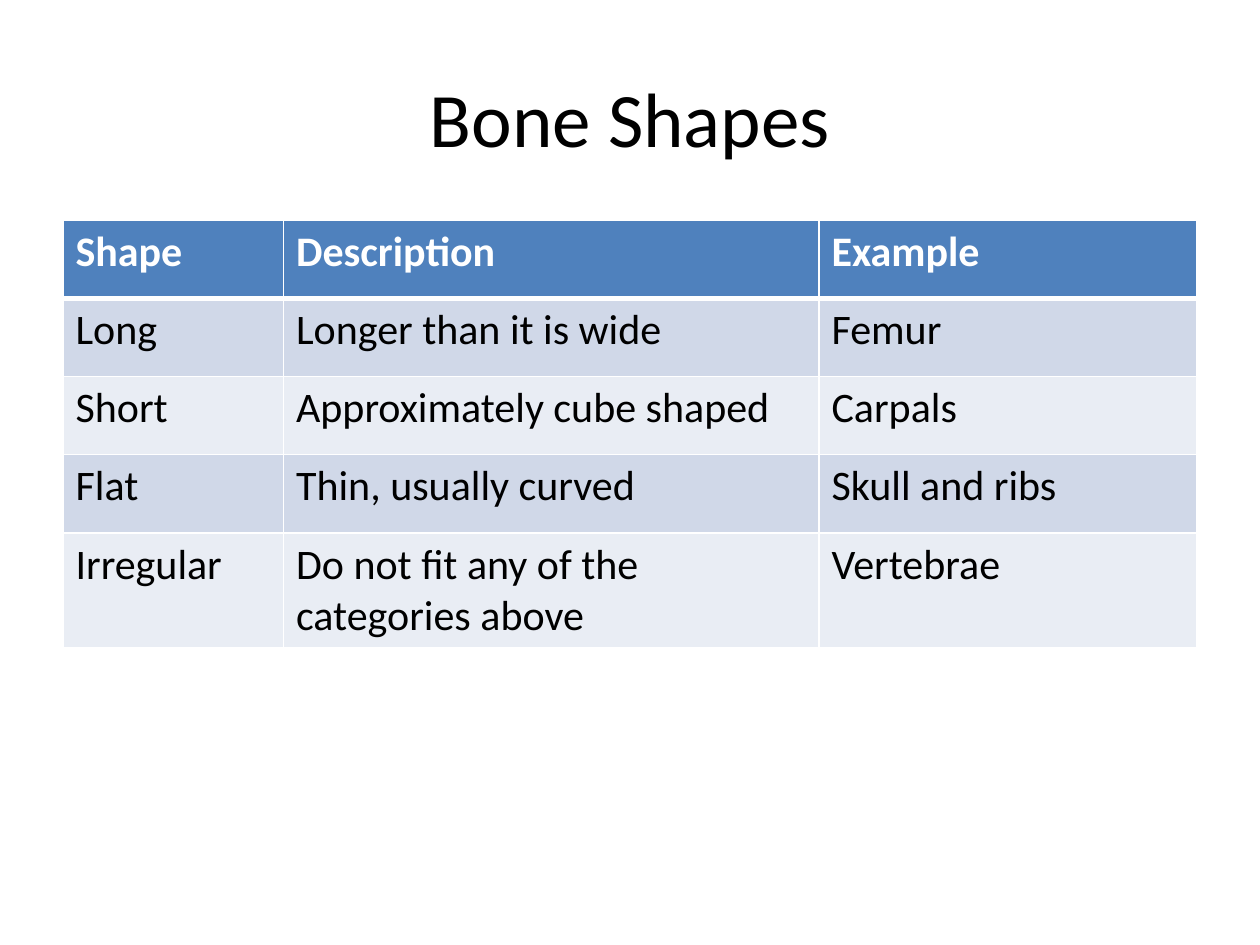
from lxml.etree import SubElement
from pptx import Presentation
from pptx.dml.color import RGBColor
from pptx.enum.text import MSO_ANCHOR, PP_ALIGN
from pptx.oxml.ns import qn
from pptx.util import Inches, Pt

FONT = "Calibri"
WHITE, BLACK = "FFFFFF", "000000"
HEADER_FILL = "4F81BD"
BAND_FILLS = ["D0D8E8", "E9EDF4"]
COLUMN_WIDTHS = [1.75, 4.25, 3]
ROW_HEIGHT = 0.62
BONE_ROWS = [
    ["Shape", "Description", "Example"],
    ["Long", "Longer than it is wide", "Femur"],
    ["Short", "Approximately cube shaped", "Carpals"],
    ["Flat", "Thin, usually curved", "Skull and ribs"],
    ["Irregular", "Do not fit any of the categories above", "Vertebrae"],
]


def color(hex_string):
    return RGBColor.from_string(hex_string)


def write_text(text_frame, text, size=24, text_color=BLACK, bold=False,
               align=PP_ALIGN.LEFT):
    paragraph = text_frame.paragraphs[0]
    paragraph.alignment = align
    run = paragraph.add_run()
    run.text = text
    run.font.name = FONT
    run.font.size = Pt(size)
    run.font.bold = bold
    run.font.color.rgb = color(text_color)


def add_title(slide, text):
    title = slide.shapes.title
    title.left, title.top = Inches(0.5), Inches(0.3)
    title.width, title.height = Inches(9), Inches(1.25)
    title.text_frame.vertical_anchor = MSO_ANCHOR.MIDDLE
    write_text(title.text_frame, text, size=44, align=PP_ALIGN.CENTER)


def set_borders(cell, top=1, bottom=1):
    """Draw white lines around a cell; widths are in points."""
    properties = cell._tc.get_or_add_tcPr()
    for side, width in (("L", 1), ("R", 1), ("T", top), ("B", bottom)):
        line = SubElement(properties, qn(f"a:ln{side}"), w=str(Pt(width)))
        fill = SubElement(line, qn("a:solidFill"))
        SubElement(fill, qn("a:srgbClr"), val=WHITE)


def add_bone_table(slide, rows):
    table = slide.shapes.add_table(
        len(rows), len(COLUMN_WIDTHS), Inches(0.5), Inches(1.75),
        Inches(sum(COLUMN_WIDTHS)), Inches(ROW_HEIGHT * len(rows))).table
    for column, width in zip(table.columns, COLUMN_WIDTHS):
        column.width = Inches(width)

    for row_index, labels in enumerate(rows):
        table.rows[row_index].height = Inches(ROW_HEIGHT)
        is_header = row_index == 0
        fill = HEADER_FILL if is_header else BAND_FILLS[(row_index - 1) % 2]
        for column_index, label in enumerate(labels):
            cell = table.cell(row_index, column_index)
            # The line under the header is thicker than the rest
            set_borders(cell, top=3 if row_index == 1 else 1,
                        bottom=3 if is_header else 1)
            cell.fill.solid()
            cell.fill.fore_color.rgb = color(fill)
            write_text(cell.text_frame, label, bold=is_header,
                       text_color=WHITE if is_header else BLACK)


def main():
    presentation = Presentation()
    presentation.slide_width = Inches(10)
    presentation.slide_height = Inches(7.5)
    slide = presentation.slides.add_slide(presentation.slide_layouts[5])
    add_title(slide, "Bone Shapes")
    add_bone_table(slide, BONE_ROWS)
    presentation.save("out.pptx")


if __name__ == "__main__":
    main()
